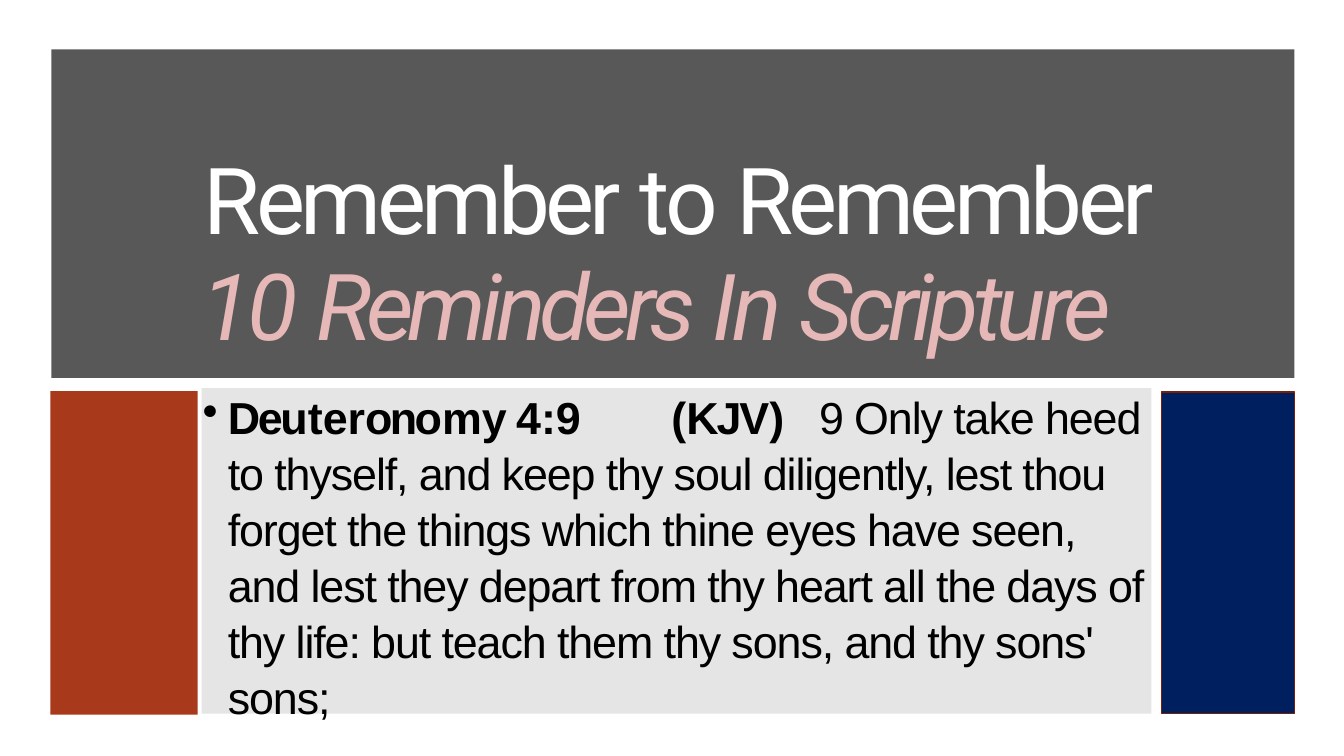
from dataclasses import dataclass
from typing import NamedTuple

from lxml import etree
from pptx import Presentation
from pptx.dml.color import RGBColor
from pptx.enum import shapes, text
from pptx.oxml import ns
from pptx.util import Inches, Pt


@dataclass(frozen=True)
class Theme:
    banner: str = "585858"
    rust: str = "A42F0E"
    rust_edge: str = "781F08"
    navy: str = "001F5F"
    panel: str = "7E7E7E"
    title: str = "FFFFFF"
    subtitle: str = "E6B9B8"
    verse: str = "000000"
    title_font: str = "Roboto"
    verse_font: str = "Arial"
    title_size: float = 66
    title_leading: float = 75.2
    verse_size: float = 32
    verse_leading: float = 1.04


class Block(NamedTuple):
    left: float
    top: float
    width: float
    height: float
    fill: str
    opacity: int = 100
    edge: str | None = None


class Span(NamedTuple):
    words: str
    tracking: float
    bold: bool = False


class Style(NamedTuple):
    font: str
    size: float
    color: str
    italic: bool = False


THEME = Theme()
BANNER = Block(0.51, 0.49, 12.33, 3.26, THEME.banner)
RUST_BLOCK = Block(0.5, 3.88, 1.46, 3.21, THEME.rust, 95)
VERSE_PANEL = Block(2, 3.85, 9.42, 3.23, THEME.panel, 20)
NAVY_BLOCK = Block(11.52, 3.89, 1.32, 3.19, THEME.navy, edge=THEME.rust_edge)

TITLE = [Span("Remember ", -3.2), Span("to ", -3), Span("Remember", -3.2)]
SUBTITLE = [Span("10 ", -2.9), Span("Reminders ", -4.3), Span("In ", -3.4), Span("Scripture", -4.2)]
VERSE = [
    Span("Deu", -1.7, True),
    Span("t", -1.1, True),
    Span("e", -1.5, True),
    Span("r", -1.4, True),
    Span("ono", -1.9, True),
    Span("m", -3.1, True),
    Span("y ", -2.4, True),
    Span("4", -1.5, True),
    Span(":", -1.6, True),
    Span("9\t", -1.4, True),
    Span("(", -0.8, True),
    Span("KJV", -1.6, True),
    Span(")\t ", -1.1, True),
    Span(
        "9 Only take heed to thyself, and keep thy soul diligently, lest thou forget "
        "the things which thine eyes have seen, and lest they depart from thy heart "
        "all the days of thy life: but teach them thy sons, and thy sons' sons;",
        -0.8,
    ),
]
VERSE_TABS = [0.26, 2.77, 3.55, 4.66]


def draw_block(page, block: Block):
    box = page.shapes.add_shape(
        shapes.MSO_SHAPE.RECTANGLE,
        Inches(block.left), Inches(block.top), Inches(block.width), Inches(block.height),
    )
    box.shadow.inherit = False
    box.fill.solid()
    box.fill.fore_color.rgb = RGBColor.from_string(block.fill)
    if block.opacity < 100:
        color = box._element.spPr.find(".//" + ns.qn("a:srgbClr"))
        etree.SubElement(color, ns.qn("a:alpha"), val=str(block.opacity * 1000))
    if block.edge:
        box.line.color.rgb = RGBColor.from_string(block.edge)
        box.line.width = Pt(1)
    else:
        box.line.fill.background()
    return box


def prepare_frame(box, top_inset: float = 0):
    frame = box.text_frame
    frame.word_wrap = True
    frame.vertical_anchor = text.MSO_ANCHOR.TOP
    frame.margin_left = frame.margin_right = frame.margin_bottom = 0
    frame.margin_top = Inches(top_inset)
    return frame


def write_spans(para, spans: list[Span], style: Style) -> None:
    para.alignment = text.PP_ALIGN.LEFT
    for span in spans:
        run = para.add_run()
        run.text = span.words
        run.font.name = style.font
        run.font.size = Pt(style.size)
        run.font.color.rgb = RGBColor.from_string(style.color)
        run.font.bold = span.bold
        run.font.italic = style.italic
        run.font._element.set("spc", str(round(span.tracking * 100)))


def set_indent(para, margin: float, first_line: float = 0) -> None:
    properties = para._p.get_or_add_pPr()
    properties.set("marL", str(Inches(margin)))
    properties.set("indent", str(Inches(first_line)))


def add_bullet_and_tabs(para, tabs: list[float]) -> None:
    properties = para._p.get_or_add_pPr()
    etree.SubElement(properties, ns.qn("a:buChar"), char="•")
    tab_list = etree.SubElement(properties, ns.qn("a:tabLst"))
    for position in tabs:
        etree.SubElement(tab_list, ns.qn("a:tab"), pos=str(Inches(position)), algn="l")


def draw_title(page) -> None:
    box = page.shapes.add_textbox(Inches(1.99), Inches(1.46), Inches(9.8), Inches(2.12))
    frame = prepare_frame(box, 0.01)
    heading, subheading = frame.paragraphs[0], frame.add_paragraph()
    heading.space_before = Pt(1)
    set_indent(heading, 0.03)
    set_indent(subheading, 0.01)
    for para in (heading, subheading):
        para.line_spacing = Pt(THEME.title_leading)
    write_spans(heading, TITLE, Style(THEME.title_font, THEME.title_size, THEME.title))
    write_spans(subheading, SUBTITLE, Style(THEME.title_font, THEME.title_size, THEME.subtitle, True))


def draw_verse(page) -> None:
    para = prepare_frame(draw_block(page, VERSE_PANEL)).paragraphs[0]
    para.line_spacing = THEME.verse_leading
    para.space_before = Pt(0.9)
    set_indent(para, 0.26, -0.25)
    add_bullet_and_tabs(para, VERSE_TABS)
    write_spans(para, VERSE, Style(THEME.verse_font, THEME.verse_size, THEME.verse))


def main() -> None:
    deck = Presentation()
    deck.slide_width, deck.slide_height = Inches(13.33), Inches(7.5)
    page = deck.slides.add_slide(deck.slide_layouts[6])
    draw_block(page, BANNER)
    draw_title(page)
    draw_block(page, RUST_BLOCK)
    draw_verse(page)
    draw_block(page, NAVY_BLOCK)
    deck.save("out.pptx")


if __name__ == "__main__":
    main()
